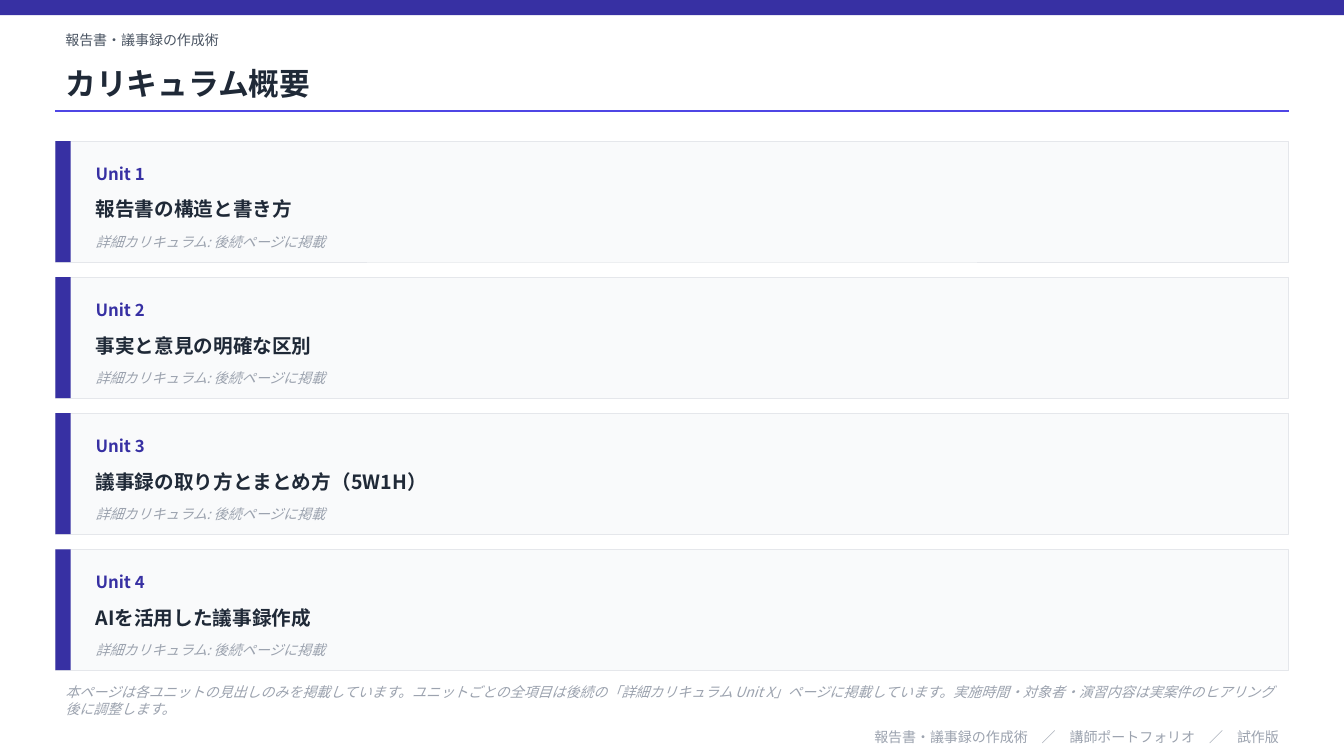
from dataclasses import dataclass

from lxml import etree
from pptx import Presentation
from pptx.dml.color import RGBColor
from pptx.enum import shapes, text
from pptx.oxml import ns
from pptx.util import Pt

FONT = "Noto Sans CJK JP"
INDIGO, VIOLET = "3730A3", "4F46E5"
DARK, SLATE, GREY = "1F2937", "4B5563", "9CA3AF"
CARD_FILL, CARD_LINE = "F9FAFB", "E5E7EB"

PAGE_WIDTH, PAGE_HEIGHT = 960, 540
MARGIN = 39.6
CONTENT_WIDTH = PAGE_WIDTH - 2 * MARGIN
BAR = 10.8
CARD_TOP, CARD_HEIGHT, CARD_PITCH = 100.8, 86.4, 97.2
CARD_TEXT_LEFT = 61.2
CARD_TEXT_WIDTH = CONTENT_WIDTH - 36


@dataclass
class Unit:
    label: str
    heading: str
    detail: str = "詳細カリキュラム: 後続ページに掲載"


UNITS = [
    Unit("Unit 1", "報告書の構造と書き方"),
    Unit("Unit 2", "事実と意見の明確な区別"),
    Unit("Unit 3", "議事録の取り方とまとめ方（5W1H）"),
    Unit("Unit 4", "AIを活用した議事録作成"),
]


def colour(value: str) -> RGBColor:
    return RGBColor.from_string(value)


def write(box, words: str, *, size: float, ink: str, bold: bool = False,
          italic: bool = False, align=text.PP_ALIGN.LEFT) -> None:
    frame = box.text_frame
    frame.word_wrap = True
    frame.auto_size = text.MSO_AUTO_SIZE.NONE
    frame.vertical_anchor = text.MSO_ANCHOR.MIDDLE
    para = frame.paragraphs[0]
    para.alignment = align
    span = para.add_run()
    span.text = words
    font = span.font
    font.name, font.size, font.bold, font.italic = FONT, Pt(size), bold, italic
    font.color.rgb = colour(ink)
    # East Asian typeface follows the Latin one
    latin = span._r.rPr.find(ns.qn("a:latin"))
    east_asian = etree.Element(ns.qn("a:ea"), typeface=FONT)
    latin.addnext(east_asian)


def add_text(page, words: str, left: float, top: float, width: float,
             height: float, **style) -> None:
    box = page.shapes.add_textbox(Pt(left), Pt(top), Pt(width), Pt(height))
    write(box, words, **style)


def add_rect(page, left: float, top: float, width: float, height: float,
             fill: str, line: str = "") -> None:
    rect = page.shapes.add_shape(shapes.MSO_SHAPE.RECTANGLE, Pt(left), Pt(top),
                                 Pt(width), Pt(height))
    rect.shadow.inherit = False
    rect.fill.solid()
    rect.fill.fore_color.rgb = colour(fill)
    if line:
        rect.line.color.rgb = colour(line)
        rect.line.width = Pt(0.5)
    else:
        rect.line.fill.background()


def add_rule(page, left: float, top: float, width: float) -> None:
    rule = page.shapes.add_connector(shapes.MSO_CONNECTOR.STRAIGHT, Pt(left),
                                     Pt(top), Pt(left + width), Pt(top))
    rule.line.color.rgb = colour(VIOLET)
    rule.line.width = Pt(1)
    etree.SubElement(rule._element.spPr, ns.qn("a:effectLst"))


def add_card(page, unit: Unit, top: float) -> None:
    add_rect(page, MARGIN, top, CONTENT_WIDTH, CARD_HEIGHT, CARD_FILL, CARD_LINE)
    add_rect(page, MARGIN, top, BAR, CARD_HEIGHT, INDIGO)
    add_text(page, unit.label, CARD_TEXT_LEFT, top + 8.64, 108, 28.8,
             size=12, ink=INDIGO, bold=True)
    add_text(page, unit.heading, CARD_TEXT_LEFT, top + 32.4, CARD_TEXT_WIDTH, 32.4,
             size=14, ink=DARK, bold=True)
    add_text(page, unit.detail, CARD_TEXT_LEFT, top + 61.2, CARD_TEXT_WIDTH, 21.6,
             size=10, ink=GREY, italic=True)


def main() -> None:
    deck = Presentation()
    deck.slide_width, deck.slide_height = Pt(PAGE_WIDTH), Pt(PAGE_HEIGHT)
    page = deck.slides.add_slide(deck.slide_layouts.get_by_name("Title Only"))

    # Header
    add_rect(page, 0, 0, PAGE_WIDTH, BAR, INDIGO)
    add_text(page, "報告書・議事録の作成術", MARGIN, 18, CONTENT_WIDTH, 21.6,
             size=10, ink=SLATE)
    title = page.shapes.title
    title.left, title.top = Pt(MARGIN), Pt(39.6)
    title.width, title.height = Pt(CONTENT_WIDTH), Pt(39.6)
    write(title, "カリキュラム概要", size=22, ink=DARK, bold=True)
    add_rule(page, MARGIN, 79.2, CONTENT_WIDTH)

    # Unit cards
    for index, unit in enumerate(UNITS):
        add_card(page, unit, CARD_TOP + index * CARD_PITCH)

    # Note and footer
    add_text(page, "本ページは各ユニットの見出しのみを掲載しています。"
             "ユニットごとの全項目は後続の「詳細カリキュラム Unit X」ページに掲載しています。"
             "実施時間・対象者・演習内容は実案件のヒアリング後に調整します。",
             MARGIN, 486, CONTENT_WIDTH, 28.8, size=10, ink=GREY, italic=True)
    add_text(page, "報告書・議事録の作成術　／　講師ポートフォリオ　／　試作版",
             MARGIN, 518.4, CONTENT_WIDTH, 15.84, size=10, ink=GREY,
             align=text.PP_ALIGN.RIGHT)

    deck.save("out.pptx")


if __name__ == "__main__":
    main()
